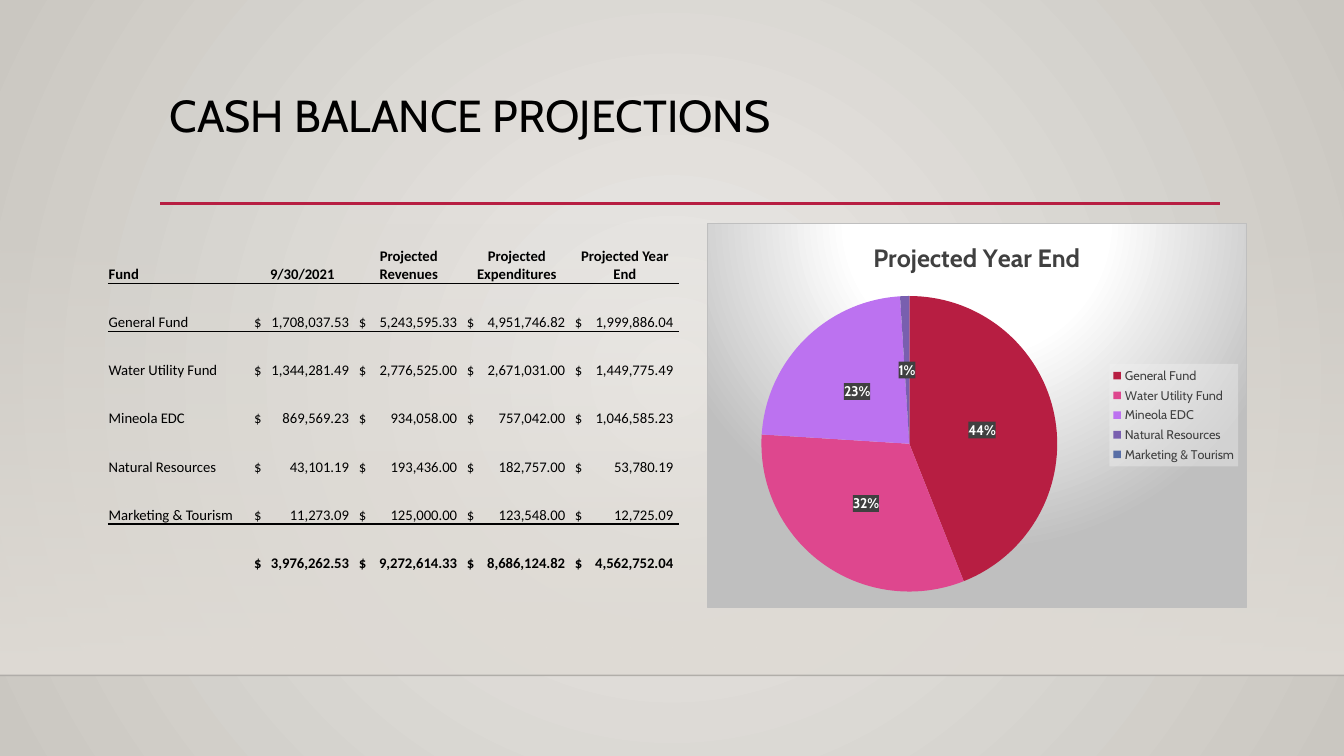
from lxml.etree import SubElement
from pptx import Presentation
from pptx.chart.data import CategoryChartData
from pptx.dml.color import RGBColor
from pptx.enum.chart import XL_CHART_TYPE, XL_LABEL_POSITION, XL_LEGEND_POSITION
from pptx.enum.shapes import MSO_CONNECTOR, MSO_SHAPE
from pptx.enum.text import MSO_ANCHOR, MSO_AUTO_SIZE, PP_ALIGN
from pptx.oxml import parse_xml
from pptx.oxml.ns import nsdecls, qn
from pptx.util import Pt

COLORS = {
    "black": "000000", "accent": "B71E42", "text": "404040", "white": "FFFFFF",
    "glow": "ECEAE7", "edge": "CAC7C1", "band": "DFDBD5", "floor": "000001",
    "panel": "BFBFBF", "legend": "F2F2F2",
}
SLICE_COLORS = ["B71E42", "DE478E", "BC72F0", "795FAF", "586EA6"]
HEADERS = ["Fund", "9/30/2021", "Projected Revenues", "Projected Expenditures",
           "Projected Year End"]
FUNDS = [
    ["General Fund", "1,708,037.53", "5,243,595.33", "4,951,746.82", "1,999,886.04"],
    ["Water Utility Fund", "1,344,281.49", "2,776,525.00", "2,671,031.00", "1,449,775.49"],
    ["Mineola EDC", "869,569.23", "934,058.00", "757,042.00", "1,046,585.23"],
    ["Natural Resources", "43,101.19", "193,436.00", "182,757.00", "53,780.19"],
    ["Marketing & Tourism", "11,273.09", "125,000.00", "123,548.00", "12,725.09"],
]
TOTALS = ["", "3,976,262.53", "9,272,614.33", "8,686,124.82", "4,562,752.04"]
SHARES = [44, 32, 23, 1, 0]


def rgb(name):
    return RGBColor.from_string(COLORS[name])


def style_font(font, name, size, color, bold=False):
    font.name, font.size, font.bold = name, Pt(size), bold
    font.color.rgb = rgb(color)


def color_xml(name, alpha=100):
    return f'<a:srgbClr val="{COLORS[name]}"><a:alpha val="{alpha * 1000}"/></a:srgbClr>'


def gradient_xml(stops, direction):
    """Stops are (position, colour, alpha) in percent."""
    stop_xml = "".join(f'<a:gs pos="{position * 1000}">{color_xml(color, alpha)}</a:gs>'
                       for position, color, alpha in stops)
    return (f'<a:gradFill {nsdecls("a")} rotWithShape="1">'
            f'<a:gsLst>{stop_xml}</a:gsLst>{direction}</a:gradFill>')


def circle_xml(left, top, right, bottom):
    return (f'<a:path path="circle"><a:fillToRect l="{left * 1000}" t="{top * 1000}" '
            f'r="{right * 1000}" b="{bottom * 1000}"/></a:path>')


def replace_solid_fill(fill, element, new_xml):
    fill.solid()
    solid = next(element.iter(qn("a:solidFill")))
    solid.getparent().replace(solid, parse_xml(new_xml))


def format_chart_part(element, content):
    """Give a chart part its own fill and line, placed before its text properties."""
    properties = parse_xml(f'<c:spPr {nsdecls("c", "a")}>{content}</c:spPr>')
    element.find(qn("c:txPr")).addprevious(properties)


def add_rule(slide, left, top, width, color, weight, alpha=100):
    line = slide.shapes.add_connector(
        MSO_CONNECTOR.STRAIGHT, Pt(left), Pt(top), Pt(left + width), Pt(top))
    line.line.color.rgb = rgb(color)
    line.line.width = Pt(weight)
    properties = line._element.spPr
    if alpha < 100:
        value = next(properties.iter(qn("a:srgbClr")))
        SubElement(value, qn("a:alpha")).set("val", str(alpha * 1000))
    SubElement(properties, qn("a:effectLst"))


def add_backdrop(slide, left, top, width, height):
    background = slide.background
    replace_solid_fill(background.fill, slide._element, gradient_xml(
        [(0, "glow", 100), (100, "edge", 100)], circle_xml(50, 50, 50, 50)))
    band = slide.shapes.add_shape(
        MSO_SHAPE.RECTANGLE, Pt(left), Pt(top), Pt(width), Pt(height))
    band.shadow.inherit = False
    band.line.fill.background()
    replace_solid_fill(band.fill, band._element.spPr, gradient_xml(
        [(0, "band", 0), (100, "band", 100)], '<a:lin ang="5400000" scaled="0"/>'))
    add_rule(slide, left, top + height, width, "floor", 1, alpha=20)


def add_title(slide, left, top, width, height):
    title = slide.shapes.title
    title.left, title.top, title.width, title.height = map(Pt, (left, top, width, height))
    frame = title.text_frame
    frame.text = "CASH BALANCE PROJECTIONS"
    frame.auto_size = MSO_AUTO_SIZE.NONE
    frame.word_wrap = True
    frame.vertical_anchor = MSO_ANCHOR.TOP
    paragraph = frame.paragraphs[0]
    paragraph.alignment = PP_ALIGN.LEFT
    paragraph.line_spacing = 0.9
    style_font(paragraph.runs[0].font, "Cabin", 32, "black")
    add_rule(slide, left + 0.7, top + 82, 756.7, "accent", 2.5)


def set_border(cell, side, weight):
    cell._tc.get_or_add_tcPr().insert(0, parse_xml(
        f'<a:{side} {nsdecls("a")} w="{Pt(weight)}"><a:solidFill>'
        f'{color_xml("black")}</a:solidFill></a:{side}>'))


def fill_cell(cell, text, width, is_header, is_amount, bold):
    cell.fill.background()
    cell.vertical_anchor = MSO_ANCHOR.BOTTOM
    cell.margin_left = Pt(3 if is_amount else 0.7)
    cell.margin_right = cell.margin_top = Pt(0.7)
    cell.margin_bottom = 0
    paragraph = cell.text_frame.paragraphs[0]
    paragraph.text = f"$\t{text}" if is_amount else text
    if is_amount:
        tabs = SubElement(paragraph._p.get_or_add_pPr(), qn("a:tabLst"))
        tab = SubElement(tabs, qn("a:tab"))
        tab.set("pos", str(Pt(width - 7)))
        tab.set("algn", "r")
    elif is_header and text != HEADERS[0]:
        paragraph.alignment = PP_ALIGN.CENTER
    style_font(paragraph.font, "Calibri", 10.5, "black", bold)
    for run in paragraph.runs:
        style_font(run.font, "Calibri", 10.5, "black", bold)


def add_fund_table(slide, left, top, width, height):
    rows = [HEADERS, *FUNDS, TOTALS]
    last = len(rows) - 1
    header_height = 36.5
    row_height = (height - header_height) / last
    amount_width = 77.2
    widths = [101.5, width - 101.5 - 3 * amount_width] + [amount_width] * 3
    frame = slide.shapes.add_table(
        len(rows), len(HEADERS), Pt(left), Pt(top), Pt(width), Pt(height))
    table = frame.table
    table.first_row = table.horz_banding = False
    table._tbl.tblPr.find(qn("a:tableStyleId")).text = "{2D5ABB26-0587-4C30-8999-92F81FD0307C}"
    for column, column_width in zip(table.columns, widths):
        column.width = Pt(column_width)
    rules = {0: 0.5, last - 1: 2}
    for row_index, row in enumerate(rows):
        is_header = row_index == 0
        table.rows[row_index].height = Pt(header_height if is_header else row_height)
        for column_index, text in enumerate(row):
            cell = table.cell(row_index, column_index)
            fill_cell(cell, text, widths[column_index], is_header,
                      not is_header and column_index > 0, row_index in (0, last))
            if row_index in rules:
                set_border(cell, "lnB", rules[row_index])
            if row_index - 1 in rules:
                set_border(cell, "lnT", rules[row_index - 1])


def add_year_end_chart(slide, left, top, width, height):
    data = CategoryChartData(number_format="0")
    data.categories = [fund[0] for fund in FUNDS]
    data.add_series(HEADERS[-1], SHARES)
    chart = slide.shapes.add_chart(
        XL_CHART_TYPE.PIE, Pt(left), Pt(top), Pt(width), Pt(height), data).chart
    style_font(chart.font, "Cabin", 10, "black")
    format_chart_part(chart.element, gradient_xml(
        [(0, "white", 100), (39, "white", 100), (100, "panel", 100)],
        circle_xml(50, -80, 50, 180))
        + f'<a:ln w="{Pt(0.75)}"><a:solidFill>{color_xml("panel")}</a:solidFill></a:ln>')

    chart.has_title = True
    chart.chart_title.include_in_layout = False
    title = chart.chart_title.text_frame
    title.text = HEADERS[-1]
    style_font(title.paragraphs[0].runs[0].font, "Cabin", 18, "text", True)

    chart.has_legend = True
    legend = chart.legend
    legend.position = XL_LEGEND_POSITION.RIGHT
    legend.include_in_layout = False
    style_font(legend.font, "Cabin", 9, "text")
    format_chart_part(legend._element,
                      f'<a:solidFill>{color_xml("legend", 39)}</a:solidFill>')

    plot = chart.plots[0]
    plot.vary_by_categories = True
    for index, color in enumerate(SLICE_COLORS):
        fill = plot.series[0].points[index].format.fill
        fill.solid()
        fill.fore_color.rgb = RGBColor.from_string(color)
    labels = plot.series[0].data_labels
    labels.show_percentage = True
    labels.show_value = False
    labels.number_format = "0%"
    labels.number_format_is_linked = False
    labels.position = XL_LABEL_POSITION.CENTER
    style_font(labels.font, "Cabin", 10, "white", True)
    format_chart_part(labels._element,
                      f'<a:solidFill>{color_xml("text", 90)}</a:solidFill>')

    plot_area = next(chart.element.iter(qn("c:plotArea")))
    for layout in plot_area.findall(qn("c:layout")):
        plot_area.remove(layout)
    place = "".join(f'<c:{key} val="{value}"/>' for key, value in [
        ("layoutTarget", "inner"), ("xMode", "edge"), ("yMode", "edge"),
        ("x", 0.1), ("y", 0.19), ("w", 0.55), ("h", 0.77)])
    plot_area.insert(0, parse_xml(
        f'<c:layout {nsdecls("c")}><c:manualLayout>{place}</c:manualLayout></c:layout>'))


def main():
    presentation = Presentation()
    presentation.slide_width, presentation.slide_height = Pt(960), Pt(540)
    slide = presentation.slides.add_slide(presentation.slide_layouts[5])
    add_backdrop(slide, 0, 159, 960, 323.4)
    add_title(slide, 113.8, 63.4, 756, 83.5)
    add_fund_table(slide, 77, 165.6, 408, 243.4)
    add_year_end_chart(slide, 504.7, 159, 386, 275)
    presentation.save("out.pptx")


if __name__ == "__main__":
    main()
